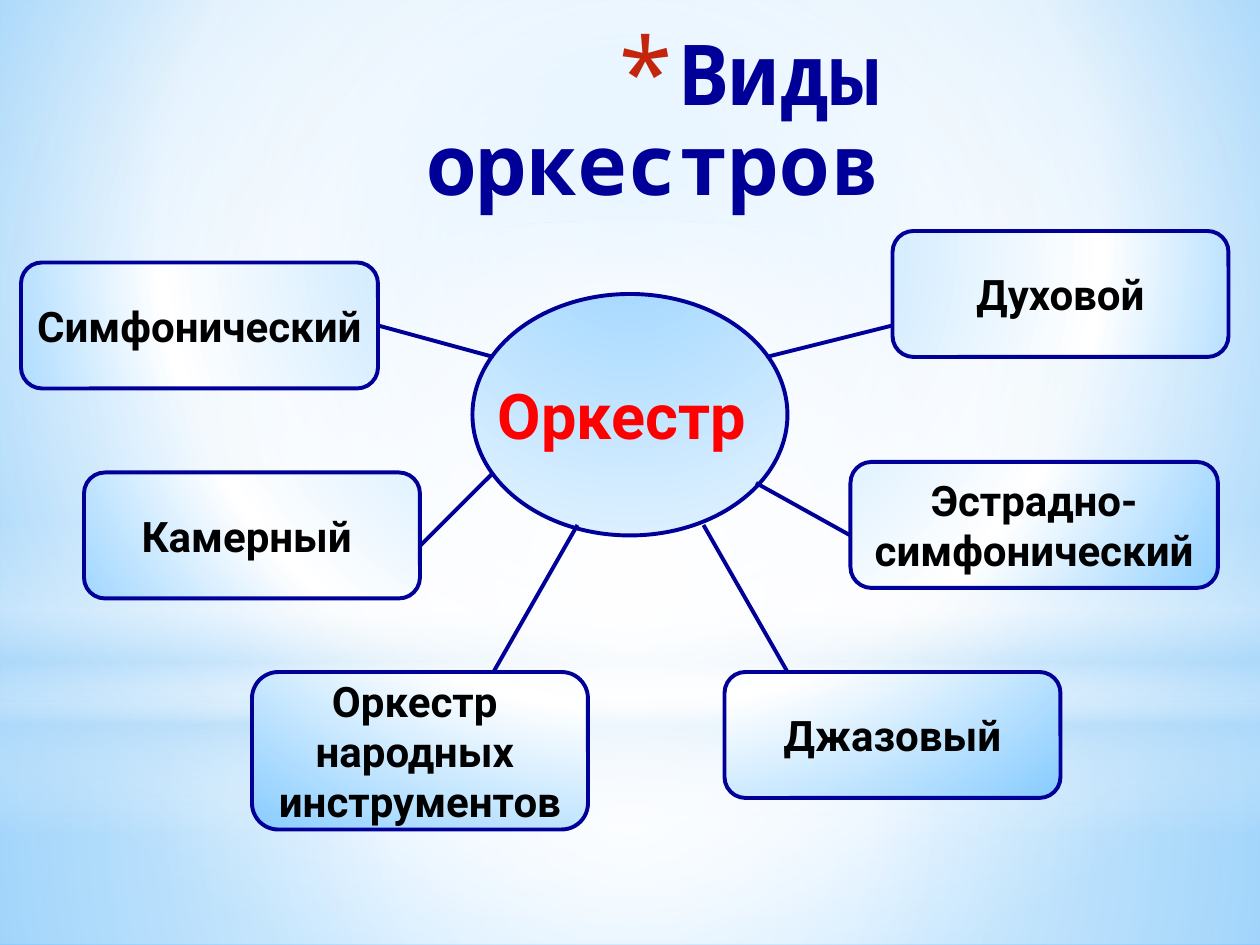
import dataclasses

import lxml.etree
import pptx
import pptx.dml.color
import pptx.enum.shapes
import pptx.enum.text
import pptx.oxml
import pptx.oxml.ns
import pptx.util

PX = 9525
NS = pptx.oxml.ns.nsdecls("a", "p")
SHAPE = pptx.enum.shapes.MSO_SHAPE


@dataclasses.dataclass(frozen=True)
class Theme:
    ink: str = "000099"
    text: str = "000000"
    hub: str = "FF0000"
    bullet: str = "C3260C"
    white: str = "FFFFFF"
    haze: str = "B4DCFA"
    sky: str = "9ED5FF"
    deep: str = "5BB9FF"
    title_font: str = "Noto Sans Mono"
    font: str = "Roboto"
    title_size: int = 48
    hub_size: int = 36
    box_size: int = 24
    line: float = 2.25


T = Theme()

BACKGROUND = [(0, T.sky, 100), (60, T.white, 100), (100, T.deep, 100)]
CENTRE = (50, 50, 50, 50)
VEILS = [
    (SHAPE.RECTANGLE, (0, 536, 960, 184),
     [(0, T.white, 91), (37, T.white, 76), (100, T.haze, 79)], CENTRE),
    (SHAPE.RECTANGLE, (0, 0, 960, 536),
     [(0, T.white, 89), (48, T.white, 62), (100, T.haze, 79)], CENTRE),
    (SHAPE.RECTANGLE, (0, 396, 960, 240),
     [(0, T.white, 0), (29, T.white, 30), (45, T.haze, 40),
      (55, T.white, 26), (65, T.haze, 60), (100, T.white, 0)], None),
    (SHAPE.OVAL, (0, 168, 960, 536),
     [(0, T.white, 100), (56, T.white, 0)], CENTRE),
]
BOXES = [
    ((552, 512, 256, 96), "Джазовый"),
    ((648, 352, 280, 96), "Эстрадно-\nсимфонический"),
    ((192, 512, 256, 120), "Оркестр \nнародных \nинструментов"),
    ((680, 176, 256, 96), "Духовой"),
    ((64, 360, 256, 96), "Камерный "),
    ((16, 200, 272, 96), "Симфонический"),
]
LINKS = [
    (288, 248, 376, 272),
    (320, 416, 376, 360),
    (440, 400, 376, 512),
    (536, 400, 600, 512),
    (576, 368, 648, 408),
    (584, 272, 680, 248),
]


def emu(values):
    return [v * PX for v in values]


def rgb(value):
    return pptx.dml.color.RGBColor.from_string(value)


def gradient(stops, focus):
    gs = "".join(
        f'<a:gs pos="{pos * 1000}"><a:srgbClr val="{color}">'
        f'<a:alpha val="{alpha * 1000}"/></a:srgbClr></a:gs>'
        for pos, color, alpha in stops)
    if focus:
        l, t, r, b = (v * 1000 for v in focus)
        course = (f'<a:path path="circle"><a:fillToRect l="{l}" t="{t}" '
                  f'r="{r}" b="{b}"/></a:path>')
    else:
        course = '<a:lin ang="5400000" scaled="0"/>'
    return f'<a:gradFill rotWithShape="1"><a:gsLst>{gs}</a:gsLst>{course}</a:gradFill>'


def set_background(s):
    fill = gradient(BACKGROUND, (20, 10, 20, 60))
    bg = pptx.oxml.parse_xml(
        f'<p:bg {NS}><p:bgPr>{fill}<a:effectLst/></p:bgPr></p:bg>')
    s.element.cSld.insert(0, bg)


def add_veil(s, kind, box, stops, focus):
    sp = s.shapes.add_shape(kind, *emu(box))
    sp.shadow.inherit = False
    sp.line.fill.background()
    holder = pptx.oxml.parse_xml(f"<p:bgPr {NS}>{gradient(stops, focus)}</p:bgPr>")
    sp.element.spPr.find(pptx.oxml.ns.qn("a:prstGeom")).addnext(holder[0])


def format_runs(p, font, size, color):
    for r in p.runs:
        r.font.name = font
        r.font.size = pptx.util.Pt(size)
        r.font.bold = True
        r.font.color.rgb = rgb(color)


def add_title(s, text):
    sp = s.shapes.title
    s.shapes.element.append(sp.element)
    sp.left, sp.top, sp.width, sp.height = emu((152, 20, 528, 144))
    tf = sp.text_frame
    tf.text = text
    tf.word_wrap = True
    tf.auto_size = pptx.enum.text.MSO_AUTO_SIZE.NONE
    tf.vertical_anchor = pptx.enum.text.MSO_ANCHOR.TOP
    p = tf.paragraphs[0]
    p.alignment = pptx.enum.text.PP_ALIGN.RIGHT
    p.line_spacing = 0.9
    format_runs(p, T.title_font, T.title_size, T.ink)
    props = p._p.get_or_add_pPr()
    props.set("marL", str(34 * PX))
    props.set("indent", str(-34 * PX))
    bullet = pptx.oxml.parse_xml(
        f'<a:pPr {NS}><a:buClr><a:srgbClr val="{T.bullet}"/></a:buClr>'
        f'<a:buSzPct val="128000"/><a:buFont typeface="{T.title_font}"/>'
        '<a:buChar char="*"/></a:pPr>')
    props.extend(list(bullet))


def add_node(s, kind, box, text, size, color):
    sp = s.shapes.add_shape(kind, *emu(box))
    sp.element.set("useBgFill", "1")
    sp.shadow.inherit = False
    sp.line.color.rgb = rgb(T.ink)
    sp.line.width = pptx.util.Pt(T.line)
    tf = sp.text_frame
    tf.text = text
    tf.word_wrap = False
    tf.vertical_anchor = pptx.enum.text.MSO_ANCHOR.MIDDLE
    for p in tf.paragraphs:
        p.alignment = pptx.enum.text.PP_ALIGN.CENTER
        format_runs(p, T.font, size, color)


def add_link(s, ends):
    line = s.shapes.add_connector(
        pptx.enum.shapes.MSO_CONNECTOR.STRAIGHT, *emu(ends))
    line.line.color.rgb = rgb(T.ink)
    line.line.width = pptx.util.Pt(T.line)
    lxml.etree.SubElement(line.element.spPr, pptx.oxml.ns.qn("a:effectLst"))


def main():
    prs = pptx.Presentation()
    prs.slide_width, prs.slide_height = emu((960, 720))
    s = prs.slides.add_slide(prs.slide_layouts[5])
    set_background(s)
    for veil in VEILS:
        add_veil(s, *veil)
    add_title(s, "Виды оркестров")
    for box, text in BOXES:
        add_node(s, SHAPE.ROUNDED_RECTANGLE, box, text, T.box_size, T.text)
    add_node(s, SHAPE.OVAL, (360, 224, 240, 184), "Оркестр ", T.hub_size, T.hub)
    for ends in LINKS:
        add_link(s, ends)
    prs.save("out.pptx")


if __name__ == "__main__":
    main()
